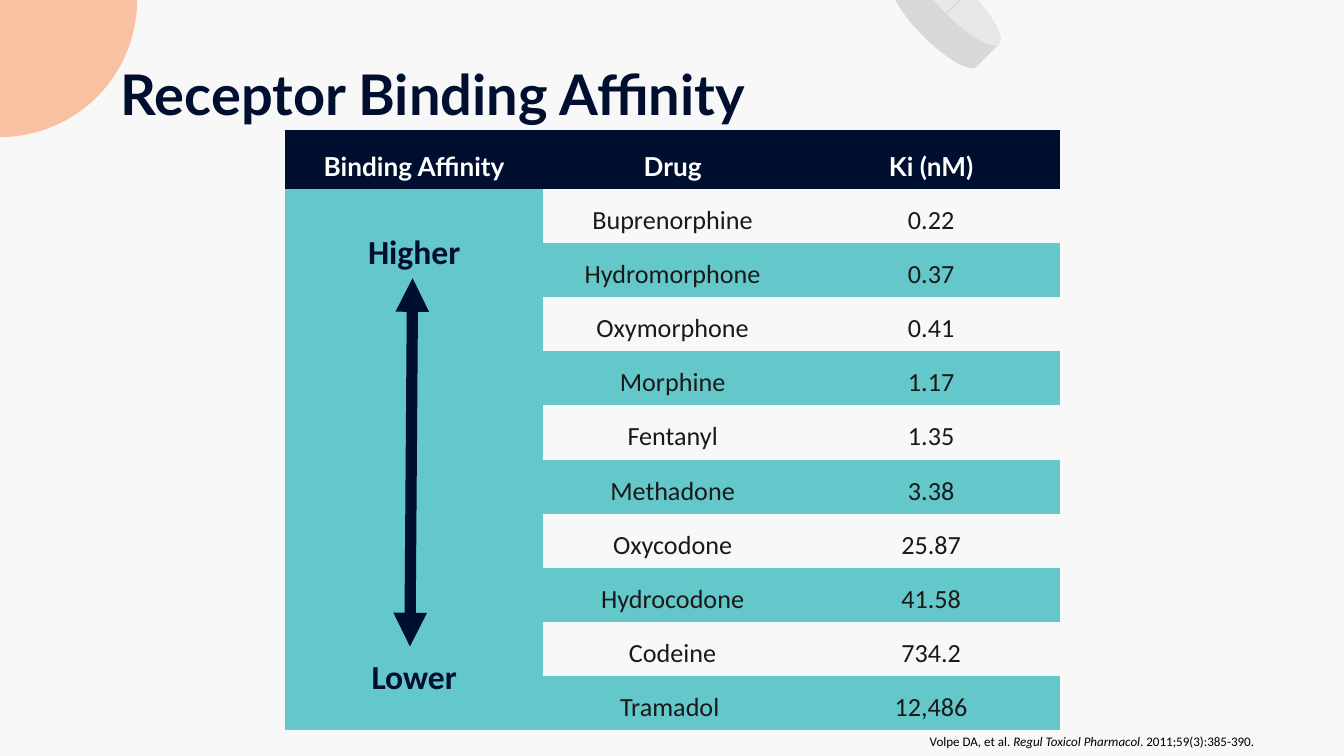
from math import cos, pi, sin

from lxml import etree
from pptx import Presentation
from pptx.dml.color import RGBColor
from pptx.enum.shapes import MSO_CONNECTOR, MSO_SHAPE
from pptx.enum.text import MSO_ANCHOR, PP_ALIGN
from pptx.oxml.ns import qn
from pptx.util import Inches, Pt

NAVY, TEAL, PEACH, GREY = "000E2F", "64C7C9", "F8C1A2", "D8D8D8"
INK, WHITE, BLACK, PAPER = "191919", "FFFFFF", "000000", "F8F8F8"
NO_STYLE_NO_GRID = "{2D5ABB26-0587-4C30-8999-92F81FD0307C}"

HEADINGS = ["Binding Affinity", "Drug", "Ki (nM)"]
DRUGS = [
    ("Buprenorphine", "0.22"),
    ("Hydromorphone", "0.37"),
    ("Oxymorphone", "0.41"),
    ("Morphine", "1.17"),
    ("Fentanyl", "1.35"),
    ("Methadone", "3.38"),
    ("Oxycodone", "25.87"),
    ("Hydrocodone", "41.58"),
    ("Codeine", "734.2"),
    ("Tramadol ", "12,486"),
]


def rgb(hex_code):
    return RGBColor.from_string(hex_code)


class SlideBuilder:
    heading_font = "Lato"
    body_font = "Calibri"

    def __init__(self, slide):
        self.slide = slide
        self.shapes = slide.shapes

    def background(self, color):
        fill = self.slide.background.fill
        fill.solid()
        fill.fore_color.rgb = rgb(color)

    def paint(self, shape, color):
        shape.shadow.inherit = False
        shape.fill.solid()
        shape.fill.fore_color.rgb = rgb(color)
        shape.line.fill.background()

    def style(self, paragraph, size, color, font, bold=False, align=None, leading=None):
        paragraph.font.size = Pt(size)
        paragraph.font.name = font
        paragraph.font.bold = bold
        paragraph.font.color.rgb = rgb(color)
        if align is not None:
            paragraph.alignment = align
        if leading:
            paragraph.line_spacing = Pt(leading)

    def text(self, left, top, width, height, runs, inset=None, **style):
        """Add a one-paragraph box; runs are (text, italic) pairs."""
        frame = self.shapes.add_textbox(
            Inches(left), Inches(top), Inches(width), Inches(height)).text_frame
        frame.word_wrap = True
        if inset is not None:
            frame.margin_left = frame.margin_right = Inches(inset)
            frame.margin_top = frame.margin_bottom = Inches(inset)
        paragraph = frame.paragraphs[0]
        self.style(paragraph, **style)
        for words, italic in runs:
            run = paragraph.add_run()
            run.text = words
            if italic:
                run.font.italic = True

    def corner_disc(self, radius, color, steps=60):
        """Add the quarter disc centred on the slide's top left corner."""
        angles = [pi / 2 * step / steps for step in range(steps + 1)]
        outline = self.shapes.build_freeform(0, 0)
        outline.add_line_segments(
            [(Inches(radius * cos(a)), Inches(radius * sin(a))) for a in angles])
        self.paint(outline.convert_to_shape(), color)

    def tablet(self, left, top, width, height, color):
        pill = self.shapes.add_shape(
            MSO_SHAPE.CAN, Inches(left), Inches(top), Inches(width), Inches(height))
        pill.adjustments[0] = 0.665
        pill.rotation = 45
        self.paint(pill, color)

    def line(self, start, end, color, weight, arrows=False):
        line = self.shapes.add_connector(
            MSO_CONNECTOR.STRAIGHT, *map(Inches, start + end))
        line.line.color.rgb = rgb(color)
        line.line.width = Pt(weight)
        if arrows:
            outline = line.line._get_or_add_ln()
            for end_tag in ("a:headEnd", "a:tailEnd"):
                etree.SubElement(outline, qn(end_tag), type="triangle")
        etree.SubElement(line._element.spPr, qn("a:effectLst"))

    def cell(self, cell, lines, fill=None, **style):
        cell.vertical_anchor = MSO_ANCHOR.MIDDLE
        if fill:
            cell.fill.solid()
            cell.fill.fore_color.rgb = rgb(fill)
        else:
            cell.fill.background()
        cell.text = "\n".join(lines)
        for paragraph in cell.text_frame.paragraphs:
            self.style(paragraph, align=PP_ALIGN.CENTER, **style)

    def affinity_table(self, left, top, width, header_height, row_height):
        height = header_height + row_height * len(DRUGS)
        table = self.shapes.add_table(
            len(DRUGS) + 1, len(HEADINGS),
            Inches(left), Inches(top), Inches(width), Inches(height)).table
        table._tbl.tblPr.find(qn("a:tableStyleId")).text = NO_STYLE_NO_GRID
        for column in table.columns:
            column.width = Inches(width / len(HEADINGS))
        for row in table.rows:
            row.height = Inches(row_height)
        table.rows[0].height = Inches(header_height)

        for col, heading in enumerate(HEADINGS):
            self.cell(table.cell(0, col), [heading], NAVY, size=14, color=WHITE,
                      font=self.heading_font, bold=True, leading=24)
        for row, values in enumerate(DRUGS, start=1):
            for col, value in enumerate(values, start=1):
                self.cell(table.cell(row, col), [value], None if row % 2 else TEAL,
                          size=14, color=INK, font=self.body_font, leading=21.8)

        scale = table.cell(1, 0)
        scale.merge(table.cell(len(DRUGS), 0))
        self.cell(scale, ["Higher", "Lower"], TEAL, size=18, color=NAVY,
                  font=self.body_font, bold=True, leading=28.5)
        scale.text_frame.paragraphs[1].space_before = Pt(7 * 28.5)


def main():
    deck = Presentation()
    deck.slide_width, deck.slide_height = Inches(10), Inches(10 * 9 / 16)
    builder = SlideBuilder(deck.slides.add_slide(deck.slide_layouts[6]))

    builder.background(PAPER)
    builder.tablet(6.6, -0.14, 0.88, 0.48, GREY)
    builder.line((7.04, 0.1), (7.21, -0.07), GREY, 0.75)
    builder.text(0.8, 0.34, 8.43, 0.63, [("Receptor Binding Affinity", False)],
                 inset=0.1, size=30, color=NAVY, font=builder.heading_font, bold=True)
    builder.affinity_table(2.12, 0.97, 5.77, header_height=0.41, row_height=0.38)
    builder.line((3.07, 2.07), (3.05, 4.81), NAVY, 6, arrows=True)
    builder.corner_disc(1.02, PEACH)
    builder.text(5.03, 5.41, 4.4, 0.22,
                 [("Volpe DA, et al. ", False), ("Regul Toxicol Pharmacol", True),
                  (". 2011;59(3):385-390.", False)],
                 size=7, color=BLACK, font=builder.body_font, align=PP_ALIGN.RIGHT)
    deck.save("out.pptx")


if __name__ == "__main__":
    main()
